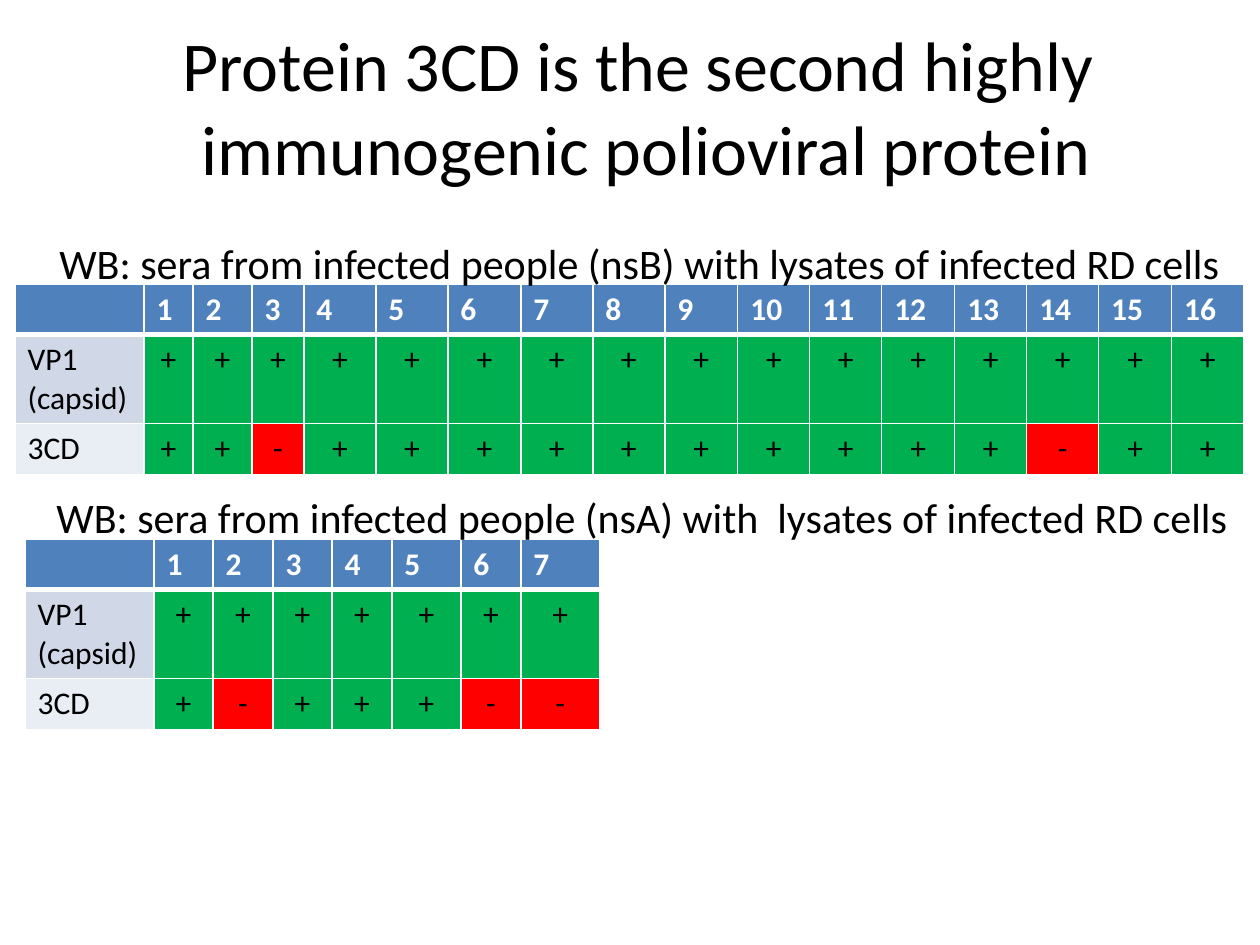
from lxml import etree
from pptx import Presentation
from pptx.dml.color import RGBColor
from pptx.enum.text import MSO_ANCHOR, PP_ALIGN
from pptx.oxml.ns import qn
from pptx.util import Emu, Pt

CENTER, MIDDLE = PP_ALIGN.CENTER, MSO_ANCHOR.MIDDLE
PX = 914400 // 126
FONT = "Calibri"
COLORS = {"text": "000000", "white": "FFFFFF", "header": "4F81BD",
          "label1": "D0D8E8", "label2": "E9EDF4", "+": "00B050", "-": "FF0000"}

TITLE = "Protein 3CD is the second highly  immunogenic polioviral protein"
TITLE_BOX = (64, 6, 1164, 198)
ROWS = (50, 89, 51)
PANELS = [
    {"caption": "WB: sera from infected people (nsB) with lysates of infected RD cells",
     "caption_box": (47, 231, 1196, 63), "at": (15, 284),
     "cols": [129, 49, 59, 52] + [72, 72, 73] * 4 + [72],
     "results": [("VP1\n(capsid)", "++++++++++++++++"), ("3CD", "++-++++++++++-++")]},
    {"caption": "WB: sera from infected people (nsA) with  lysates of infected RD cells",
     "caption_box": (44, 485, 1207, 63), "at": (25, 539),
     "cols": [129, 59, 60, 59, 60, 69, 60, 79],
     "results": [("VP1 (capsid)", "+++++++"), ("3CD", "+-+++--")]},
]


def px(*values):
    return [Emu(v * PX) for v in values]


def rgb(name):
    return RGBColor.from_string(COLORS[name])


def write(tf, text, size, color="text", bold=False, align=None):
    tf.text = text
    for p in tf.paragraphs:
        p.alignment = align
        for r in p.runs:
            r.font.name, r.font.size, r.font.bold = FONT, Pt(size), bold
            r.font.color.rgb = rgb(color)


def add_text(s, text, box, size, wrap, align=None):
    tf = s.shapes.add_textbox(*px(*box)).text_frame
    tf.word_wrap = wrap
    write(tf, text, size, align=align)
    return tf


def add_borders(cell, bottom):
    """Draw white 1 pt borders, with the bottom one at its own weight."""
    tcPr = cell._tc.get_or_add_tcPr()
    sides = {"a:lnL": 1, "a:lnR": 1, "a:lnT": 1, "a:lnB": bottom}
    for i, (tag, weight) in enumerate(sides.items()):
        ln = etree.Element(qn(tag), w=str(Pt(weight)))
        fill = etree.SubElement(ln, qn("a:solidFill"))
        etree.SubElement(fill, qn("a:srgbClr"), val=COLORS["white"])
        tcPr.insert(i, ln)


def add_results(s, at, cols, results):
    size = (sum(cols), sum(ROWS))
    table = s.shapes.add_table(len(ROWS), len(cols), *px(*at, *size)).table
    for column, width in zip(table.columns, px(*cols)):
        column.width = width
    for row, height in zip(table.rows, px(*ROWS)):
        row.height = height
    header = ["", *map(str, range(1, len(cols)))]
    grid = [header] + [[label, *signs] for label, signs in results]
    for i, texts in enumerate(grid):
        for j, text in enumerate(texts):
            cell = table.cell(i, j)
            if i == 0:
                fill, style = "header", {"color": "white", "bold": True}
            elif j == 0:
                fill, style = f"label{i}", {}
            else:
                fill, style = text, {"align": CENTER}
            write(cell.text_frame, text, 18, **style)
            cell.fill.solid()
            cell.fill.fore_color.rgb = rgb(fill)
            # the rule under the header belongs to both rows it parts
            add_borders(cell, bottom=3 if i == 0 else 1)
            if i == 1:
                cell._tc.tcPr.find(qn("a:lnT")).set("w", str(Pt(3)))


def main():
    prs = Presentation()
    prs.slide_width, prs.slide_height = px(1260, 945)
    s = prs.slides.add_slide(prs.slide_layouts[6])
    title = add_text(s, TITLE, TITLE_BOX, 40, True, CENTER)
    title.vertical_anchor = MIDDLE
    for panel in PANELS:
        add_results(s, panel["at"], panel["cols"], panel["results"])
    for panel in PANELS:
        add_text(s, panel["caption"], panel["caption_box"], 24, False)
    prs.save("out.pptx")


if __name__ == "__main__":
    main()
